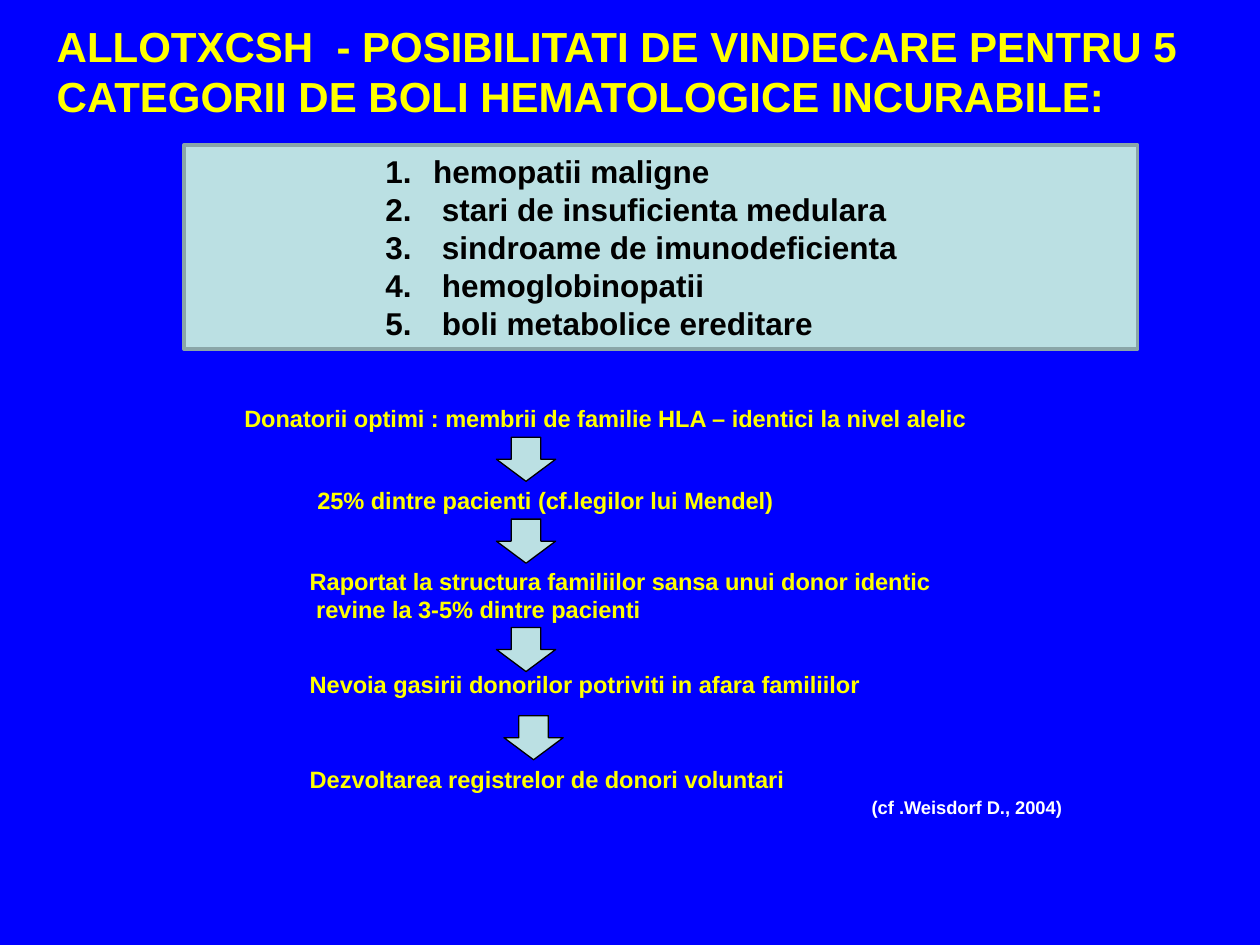
from lxml import etree
from pptx import Presentation
from pptx import util as u
from pptx.dml.color import RGBColor
from pptx.enum import shapes, text
from pptx.oxml.ns import qn

BLUE, YELLOW, PALE, GREY = "0000FF", "FFFF00", "BBE0E3", "8AA6A8"
BLACK, WHITE = "000000", "FFFFFF"

TITLE = ("ALLOTXCSH  - POSIBILITATI DE VINDECARE PENTRU 5 "
         "CATEGORII DE BOLI HEMATOLOGICE INCURABILE:")
DISEASES = ["hemopatii maligne", " stari de insuficienta medulara",
            " sindroame de imunodeficienta", " hemoglobinopatii",
            " boli metabolice ereditare"]
STEPS = [
    (1.84, 3.16, 0.33, ["Donatorii optimi : membrii de familie HLA – identici la nivel alelic"]),
    (2.42, 3.81, 0.33, ["25% dintre pacienti (cf.legilor lui Mendel)"]),
    (2.36, 4.45, 0.56, ["Raportat la structura familiilor sansa unui donor identic",
                        " revine la 3-5% dintre pacienti"]),
    (2.36, 5.27, 0.33, ["Nevoia gasirii donorilor potriviti in afara familiilor"]),
    (2.36, 6.02, 0.33, ["Dezvoltarea registrelor de donori voluntari"]),
]
ARROWS = [(3.94, 3.47), (3.94, 4.12), (3.94, 4.98), (4, 5.68)]


def color(value):
    """Turn a hex string into a colour."""
    return RGBColor.from_string(value)


def place(item, left, top, width, height):
    """Set the position and size of an item in inches."""
    item.left, item.top = u.Inches(left), u.Inches(top)
    item.width, item.height = u.Inches(width), u.Inches(height)


def write(frame, lines, size=13.5, fill=YELLOW, anchor=text.MSO_ANCHOR.TOP):
    """Fill a text frame with bold, left-aligned paragraphs."""
    frame.word_wrap = True
    frame.auto_size = text.MSO_AUTO_SIZE.NONE
    frame.vertical_anchor = anchor
    for index, line in enumerate(lines):
        para = frame.add_paragraph() if index else frame.paragraphs[0]
        para.alignment = text.PP_ALIGN.LEFT
        span = para.add_run()
        span.text = line
        span.font.name = "Arial"
        span.font.size = u.Pt(size)
        span.font.bold = True
        span.font.color.rgb = color(fill)


def add_text(page, left, top, width, height, lines, **style):
    """Add a text box."""
    box = page.shapes.add_textbox(*map(u.Inches, (left, top, width, height)))
    write(box.text_frame, lines, **style)


def add_block(page, kind, left, top, width, height, line, weight):
    """Add a pale preset shape with an outline."""
    block = page.shapes.add_shape(kind, *map(u.Inches, (left, top, width, height)))
    block.shadow.inherit = False
    block.fill.solid()
    block.fill.fore_color.rgb = color(PALE)
    block.line.color.rgb = color(line)
    block.line.width = u.Pt(weight)
    return block


def number(para, margin, indent):
    """Number a paragraph automatically with a hanging indent."""
    props = para._p.get_or_add_pPr()
    props.set("marL", str(u.Inches(margin)))
    props.set("indent", str(u.Inches(indent)))
    etree.SubElement(props, qn("a:buFont"), typeface="+mj-lt")
    etree.SubElement(props, qn("a:buAutoNum"), type="arabicPeriod")


def add_disease_list(page):
    """Add the panel with the numbered disease categories."""
    panel = add_block(page, shapes.MSO_SHAPE.RECTANGLE, 1.46, 1.15, 7.57, 1.62, GREY, 2)
    write(panel.text_frame, DISEASES, size=18, fill=BLACK, anchor=text.MSO_ANCHOR.MIDDLE)
    for para in panel.text_frame.paragraphs:
        para.level = 4
        number(para, 1.88, -0.38)


def main():
    """Build and save the slide."""
    deck = Presentation()
    deck.slide_width, deck.slide_height = u.Inches(10), u.Inches(7.5)
    page = deck.slides.add_slide(deck.slide_layouts[5])
    page.background.fill.solid()
    page.background.fill.fore_color.rgb = color(BLUE)
    title = page.shapes.title
    place(title, 0.35, 0.11, 9.21, 0.91)
    write(title.text_frame, [TITLE], size=24)
    add_disease_list(page)
    for left, top, height, lines in STEPS:
        add_text(page, left, top, 5.98, height, lines)
    for left, top in ARROWS:
        add_block(page, shapes.MSO_SHAPE.DOWN_ARROW, left, top, 0.47, 0.35, BLACK, 0.75)
    add_text(page, 6.82, 6.27, 1.93, 0.28, ["(cf .Weisdorf D., 2004)"], size=10.5, fill=WHITE)
    deck.save("out.pptx")


if __name__ == "__main__":
    main()
